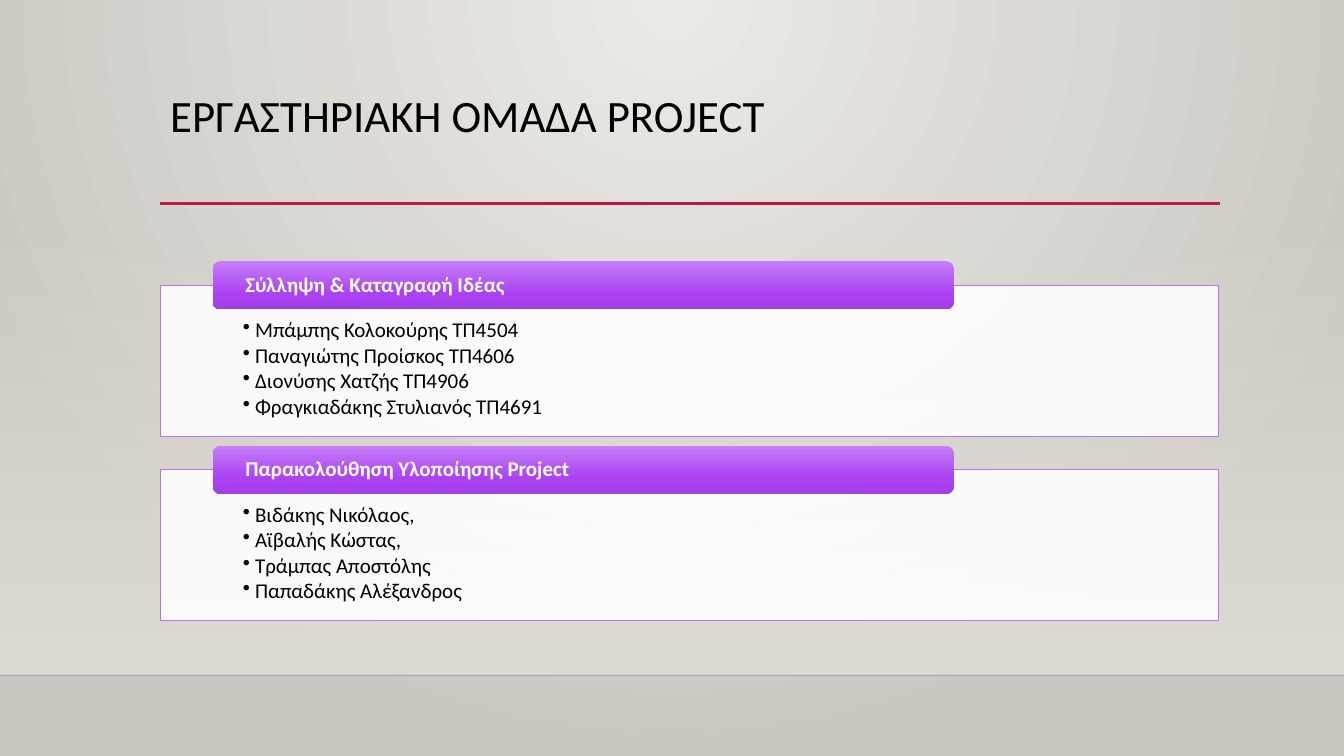
"""Build the project team slide with its two member panels."""
from dataclasses import dataclass

import lxml.etree
import pptx
import pptx.dml.color
import pptx.enum.shapes
import pptx.enum.text
import pptx.oxml.ns
import pptx.util

PX = 9144
SLIDE_WIDTH, SLIDE_HEIGHT = 1333, 750
FLOOR_TOP = 670
MARGIN_LEFT, CONTENT_WIDTH = 159, 1050
PANELS_TOP, PANEL_PITCH, PANEL_HEIGHT = 283, 183, 150
HEADING_LEFT, HEADING_WIDTH, HEADING_HEIGHT = 211, 735, 48
FONT = "Calibri"
COLORS = {
    "text": "000000",
    "white": "FFFFFF",
    "glow": "ECEAE7",
    "edge": "CAC7C1",
    "wall": "DFDBD5",
    "floor_line": "000001",
    "accent": "B71E42",
    "panel_border": "BC72F0",
    "heading_light": "C57FF7",
    "heading_mid": "AA41F3",
    "heading_dark": "A13FE5",
}
SHAPES = pptx.enum.shapes.MSO_SHAPE
ANCHOR = pptx.enum.text.MSO_ANCHOR
qn = pptx.oxml.ns.qn


@dataclass(frozen=True)
class Stop:
    position: int
    color: str
    alpha: int = 100


@dataclass(frozen=True)
class Rule:
    left: int
    right: int
    y: int
    color: str
    weight: float
    alpha: int = 100


@dataclass(frozen=True)
class Panel:
    heading: str
    members: tuple[str, ...]


BACKDROP = (Stop(0, "glow"), Stop(100, "edge"))
WALL = (Stop(0, "wall", 0), Stop(100, "wall"))
HEADING = (Stop(0, "heading_light"), Stop(69, "heading_mid"), Stop(100, "heading_dark"))
RULES = (
    Rule(0, SLIDE_WIDTH, FLOOR_TOP, "floor_line", 1, 20),
    Rule(MARGIN_LEFT, 1210, 202, "accent", 2.5),
)
PANELS = (
    Panel("Σύλληψη & Καταγραφή Ιδέας", (
        "Μπάμπης Κολοκούρης ΤΠ4504",
        "Παναγιώτης Προίσκος ΤΠ4606",
        "Διονύσης Χατζής ΤΠ4906",
        "Φραγκιαδάκης Στυλιανός ΤΠ4691",
    )),
    Panel("Παρακολούθηση Υλοποίησης Project", (
        "Βιδάκης Νικόλαος,",
        "Αϊβαλής Κώστας,",
        "Τράμπας Αποστόλης",
        "Παπαδάκης Αλέξανδρος",
    )),
)


def px(length: int) -> int:
    return pptx.util.Emu(length * PX)


def rgb(name: str) -> pptx.dml.color.RGBColor:
    return pptx.dml.color.RGBColor.from_string(COLORS[name])


def set_alpha(owner, percent: int) -> None:
    color = owner.find(".//" + qn("a:srgbClr"))
    lxml.etree.SubElement(color, qn("a:alpha"), val=str(percent * 1000))


def set_gradient(owner, stops: tuple[Stop, ...], radial: bool = False) -> None:
    gradient = lxml.etree.Element(qn("a:gradFill"), rotWithShape="1")
    stop_list = lxml.etree.SubElement(gradient, qn("a:gsLst"))
    for stop in stops:
        mark = lxml.etree.SubElement(stop_list, qn("a:gs"), pos=str(stop.position * 1000))
        lxml.etree.SubElement(mark, qn("a:srgbClr"), val=COLORS[stop.color])
        if stop.alpha < 100:
            set_alpha(mark, stop.alpha)
    if radial:
        circle = lxml.etree.SubElement(gradient, qn("a:path"), path="circle")
        lxml.etree.SubElement(circle, qn("a:fillToRect"), l="43000", t="0", r="43000", b="100000")
    else:
        lxml.etree.SubElement(gradient, qn("a:lin"), ang="5400000", scaled="0")
    owner.replace(owner.find(qn("a:solidFill")), gradient)


def add_block(slide, kind, left: int, top: int, width: int, height: int):
    block = slide.shapes.add_shape(kind, px(left), px(top), px(width), px(height))
    block.shadow.inherit = False
    block.fill.solid()
    block.fill.fore_color.rgb = rgb("white")
    block.line.fill.background()
    return block


def add_rule(slide, rule: Rule) -> None:
    line = slide.shapes.add_connector(
        pptx.enum.shapes.MSO_CONNECTOR.STRAIGHT,
        px(rule.left), px(rule.y), px(rule.right), px(rule.y))
    line.line.color.rgb = rgb(rule.color)
    line.line.width = pptx.util.Pt(rule.weight)
    properties = line.element.spPr
    if rule.alpha < 100:
        set_alpha(properties, rule.alpha)
    lxml.etree.SubElement(properties, qn("a:effectLst"))


def write(shape, lines: tuple[str, ...], *, size: int = 15, color: str = "text",
          bold: bool = False, bullets: bool = False, anchor=ANCHOR.TOP,
          insets: tuple[int, int, int, int] = (10, 5, 10, 5)) -> None:
    frame = shape.text_frame
    frame.word_wrap = True
    frame.vertical_anchor = anchor
    (frame.margin_left, frame.margin_top,
     frame.margin_right, frame.margin_bottom) = map(px, insets)
    for index, text in enumerate(lines):
        paragraph = frame.add_paragraph() if index else frame.paragraphs[0]
        paragraph.alignment = pptx.enum.text.PP_ALIGN.LEFT
        paragraph.line_spacing = 0.9
        if bullets:
            paragraph.level = 1
            paragraph.space_after = pptx.util.Pt(2)
            properties = paragraph._p.get_or_add_pPr()
            properties.set("marL", str(px(12)))
            properties.set("indent", str(-px(12)))
            lxml.etree.SubElement(properties, qn("a:buChar"), char="•")
        run = paragraph.add_run()
        run.text = text
        run.font.name = FONT
        run.font.size = pptx.util.Pt(size)
        run.font.bold = bold
        run.font.color.rgb = rgb(color)


def add_panel(slide, panel: Panel, top: int) -> None:
    body = add_block(slide, SHAPES.RECTANGLE, MARGIN_LEFT, top, CONTENT_WIDTH, PANEL_HEIGHT)
    set_alpha(body.element.spPr, 90)
    body.line.color.rgb = rgb("panel_border")
    body.line.width = pptx.util.Pt(0.75)
    write(body, panel.members, bullets=True, insets=(82, 34, 82, 12))
    heading = add_block(slide, SHAPES.ROUNDED_RECTANGLE, HEADING_LEFT,
                        top - HEADING_HEIGHT // 2, HEADING_WIDTH, HEADING_HEIGHT)
    set_gradient(heading.element.spPr, HEADING)
    write(heading, (panel.heading,), color="white", bold=True,
          anchor=ANCHOR.MIDDLE, insets=(30, 0, 30, 0))


def main() -> None:
    deck = pptx.Presentation()
    deck.slide_width, deck.slide_height = px(SLIDE_WIDTH), px(SLIDE_HEIGHT)
    slide = deck.slides.add_slide(deck.slide_layouts[6])
    slide.background.fill.solid()
    set_gradient(slide.element.cSld.bg.bgPr, BACKDROP, radial=True)
    wall = add_block(slide, SHAPES.RECTANGLE, 0, 221, SLIDE_WIDTH, FLOOR_TOP - 221)
    set_gradient(wall.element.spPr, WALL)
    for rule in RULES:
        add_rule(slide, rule)
    title = slide.shapes.add_textbox(px(MARGIN_LEFT), px(88), px(CONTENT_WIDTH), px(115))
    write(title, ("ΕΡΓΑΣΤΗΡΙΑΚH ΟΜAΔΑ PROJECT",), size=32)
    for index, panel in enumerate(PANELS):
        add_panel(slide, panel, PANELS_TOP + index * PANEL_PITCH)
    deck.save("out.pptx")


if __name__ == "__main__":
    main()
